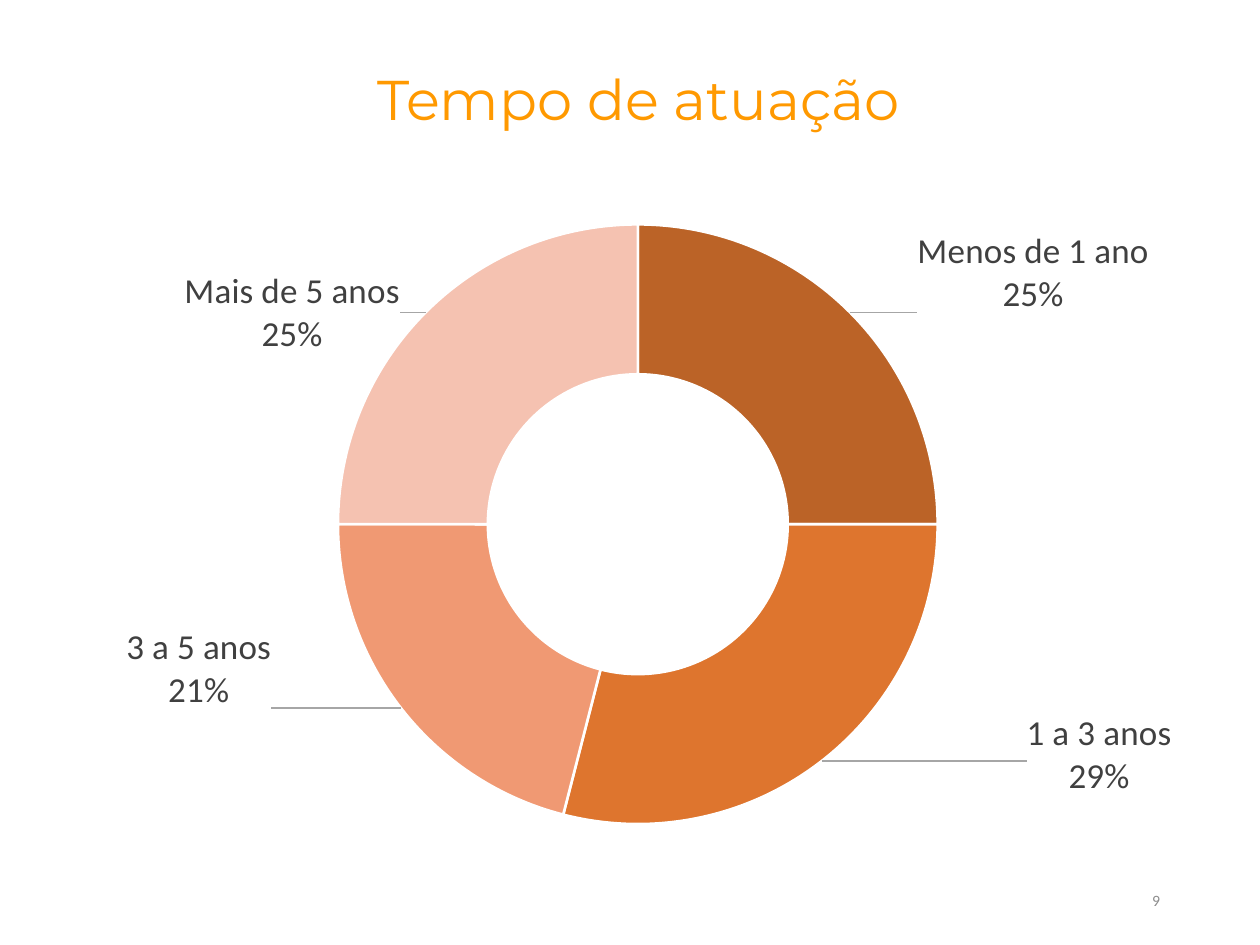
import copy
from dataclasses import dataclass

import pptx
import pptx.chart.data
import pptx.dml.color
import pptx.enum.chart
import pptx.enum.text
import pptx.oxml
import pptx.oxml.ns
import pptx.util

Pt = pptx.util.Pt
ALIGN = pptx.enum.text.PP_ALIGN


@dataclass(frozen=True)
class Theme:
    title_font: str = "Montserrat"
    body_font: str = "Calibri"
    title_size: int = 32
    chart_size: int = 10
    label_size: int = 20
    number_size: int = 9
    title_color: str = "FF9900"
    chart_color: str = "000000"
    label_color: str = "404040"
    number_color: str = "8C8C8C"
    leader_color: str = "A6A6A6"
    gap_color: str = "FFFFFF"
    slice_colors: tuple = ("BB6327", "DE752E", "F09973", "F5C2B1")


def rgb(value):
    return pptx.dml.color.RGBColor.from_string(value)


def chart_xml(markup):
    """Build one chart element, declaring the namespaces on its root tag."""
    end = markup.index(">")
    return pptx.oxml.parse_xml(
        markup[:end] + " " + pptx.oxml.ns.nsdecls("c", "a") + markup[end:])


def style_font(font, name, size, color):
    font.name = name
    font.size = Pt(size)
    font.color.rgb = rgb(color)


class SlideBuilder:
    def __init__(self, deck, theme):
        self.theme = theme
        self.slide = deck.slides.add_slide(deck.slide_layouts[5])

    def fill_text(self, box, text, align, name, size, color):
        frame = box.text_frame
        frame.word_wrap = True
        frame.vertical_anchor = pptx.enum.text.MSO_ANCHOR.MIDDLE
        frame.text = text
        para = frame.paragraphs[0]
        para.alignment = align
        style_font(para.runs[0].font, name, size, color)
        return para

    def title(self, text, left, top, width, height):
        box = self.slide.shapes.title
        box.left, box.top, box.width, box.height = map(Pt, (left, top, width, height))
        para = self.fill_text(box, text, ALIGN.CENTER, self.theme.title_font,
                              self.theme.title_size, self.theme.title_color)
        para.line_spacing = 0.9

    def page_number(self, text, left, top, width, height):
        box = self.slide.shapes.add_textbox(*map(Pt, (left, top, width, height)))
        self.fill_text(box, text, ALIGN.RIGHT, self.theme.body_font,
                       self.theme.number_size, self.theme.number_color)

    def doughnut(self, shares, label_offsets, left, top, width, height):
        data = pptx.chart.data.CategoryChartData()
        data.categories = list(shares)
        data.add_series("Series 1", list(shares.values()))
        chart = self.slide.shapes.add_chart(
            pptx.enum.chart.XL_CHART_TYPE.DOUGHNUT,
            *map(Pt, (left, top, width, height)), data).chart
        chart.has_title = False
        chart.has_legend = False
        style_font(chart.font, self.theme.body_font,
                   self.theme.chart_size, self.theme.chart_color)
        plot = chart.plots[0]
        plot.vary_by_categories = True
        series = plot.series[0]
        for index, color in enumerate(self.theme.slice_colors):
            point = series.points[index].format
            point.fill.solid()
            point.fill.fore_color.rgb = rgb(color)
            point.line.color.rgb = rgb(self.theme.gap_color)
            point.line.width = Pt(1.5)
        self.place_ring(chart, 343, width, height)
        self.slice_labels(series, label_offsets)

    def place_ring(self, chart, diameter, width, height):
        """Centre the ring across the chart, slightly below mid-height."""
        ring_width, ring_height = diameter / width, diameter / height
        area = chart._chartSpace.xpath("c:chart/c:plotArea")[0]
        for old in area.xpath("c:layout"):
            area.remove(old)
        area.insert(0, chart_xml(
            '<c:layout><c:manualLayout><c:layoutTarget val="inner"/>'
            '<c:xMode val="edge"/><c:yMode val="edge"/>'
            f'<c:x val="{(1 - ring_width) / 2:.3f}"/>'
            f'<c:y val="{(1 - ring_height) / 2 + 0.01:.3f}"/>'
            f'<c:w val="{ring_width:.3f}"/><c:h val="{ring_height:.3f}"/>'
            '</c:manualLayout></c:layout>'))
        area.xpath(".//c:holeSize")[0].set("val", "48")

    def slice_labels(self, series, offsets):
        """Move each label off its slice; offsets are fractions of the chart."""
        labels = series.data_labels
        style_font(labels.font, self.theme.body_font,
                   self.theme.label_size, self.theme.label_color)
        labels.number_format = "0%"
        labels.number_format_is_linked = False
        labels.show_value = False
        labels.show_category_name = True
        labels.show_percentage = True
        element = labels._element
        for old in element.xpath("c:showLeaderLines"):
            element.remove(old)
        element.append(chart_xml("<c:separator>\n</c:separator>"))
        shared = list(element)
        for index, (x, y) in enumerate(offsets):
            label = chart_xml(
                f'<c:dLbl><c:idx val="{index}"/><c:layout><c:manualLayout>'
                f'<c:x val="{x}"/><c:y val="{y}"/>'
                '</c:manualLayout></c:layout></c:dLbl>')
            label.extend(copy.deepcopy(child) for child in shared)
            element.insert(index, label)
        element.append(chart_xml('<c:showLeaderLines val="1"></c:showLeaderLines>'))
        element.append(chart_xml(
            '<c:leaderLines><c:spPr><a:ln w="9525"><a:solidFill>'
            f'<a:srgbClr val="{self.theme.leader_color}"/>'
            '</a:solidFill></a:ln></c:spPr></c:leaderLines>'))


def main():
    deck = pptx.Presentation()
    deck.slide_width, deck.slide_height = Pt(720), Pt(540)
    page = SlideBuilder(deck, Theme())
    page.title("Tempo de atuação", 30, 0, 670, 117)
    page.page_number("9", 508, 500, 162, 29)
    page.doughnut(
        {"Menos de 1 ano": 25, "1 a 3 anos": 29, "3 a 5 anos": 21, "Mais de 5 anos": 25},
        [(0.19, -0.14), (0.26, 0.08), (-0.21, 0.01), (-0.15, -0.08)],
        9, 107, 711, 378)
    deck.save("out.pptx")


if __name__ == "__main__":
    main()
